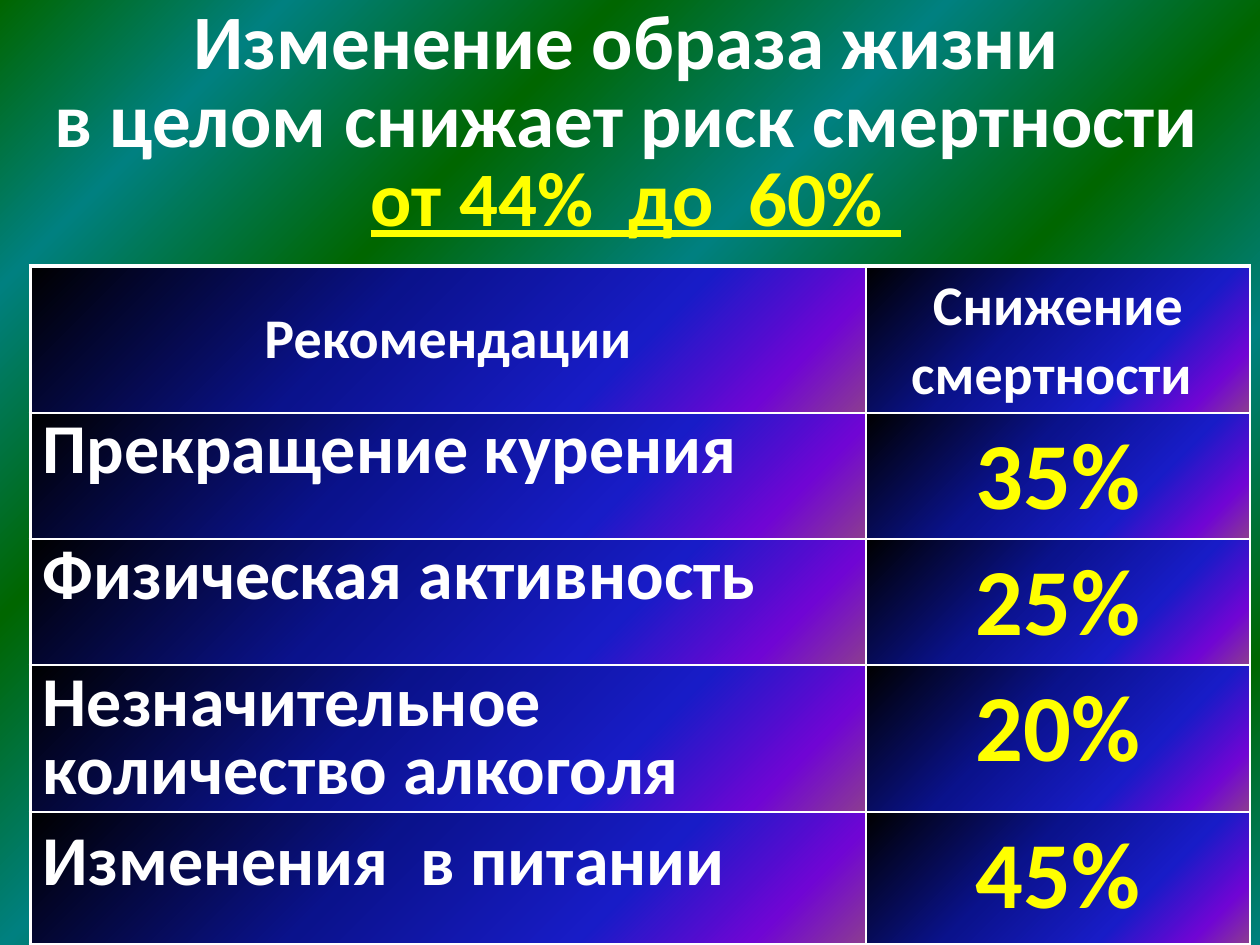
"""Slide on how lifestyle changes lower the risk of death."""
from lxml.etree import SubElement
from pptx import Presentation
from pptx.dml.color import RGBColor
from pptx.enum.text import MSO_ANCHOR as Anchor, MSO_AUTO_SIZE as AutoSize, PP_ALIGN as Align
from pptx.oxml import parse_xml
from pptx.oxml.ns import nsdecls, qn
from pptx.util import Pt

COLORS = {"white": "FFFFFF", "yellow": "FFFF00", "green": "006600", "teal": "008080",
          "black": "000000", "navy": "0A128C", "blue": "181CC7", "violet": "7005D4",
          "plum": "8C3D91"}
STRIPES = [(pos, "teal" if index % 2 else "green")
           for index, pos in enumerate((0, 13, 28, 43, 58, 72, 87, 100))]
NIGHT = [(0, "black"), (40, "navy"), (70, "blue"), (88, "violet"), (100, "plum")]
THIN, THICK = 1, 2.25
ROWS = [("Прекращение курения", "35%", 0.8),
        ("Физическая активность", "25%", 0.8),
        ("Незначительное количество алкоголя", "20%", 0.8),
        ("Изменения  в питании", "45%", None)]


def add_text(para, text, size=44, color="white", align=None, spacing=None,
             underline=None, italic=None):
    if align is not None:
        para.alignment = align
    if spacing is not None:
        para.line_spacing = spacing
    span = para.add_run()
    span.text = text
    font = span.font
    font.name, font.size, font.bold = "Calibri", Pt(size), True
    font.underline, font.italic = underline, italic
    font.color.rgb = RGBColor.from_string(COLORS[color])


def set_gradient(fill, parent, stops):
    fill.solid()
    solid = parent.find(qn("a:solidFill"))
    marks = "".join(f'<a:gs pos="{pos * 1000}"><a:srgbClr val="{COLORS[name]}"/></a:gs>'
                    for pos, name in stops)
    parent.replace(solid, parse_xml(
        f'<a:gradFill {nsdecls("a")} rotWithShape="1"><a:gsLst>{marks}</a:gsLst>'
        '<a:lin ang="2700000" scaled="1"/></a:gradFill>'))


def set_borders(cell, widths):
    props = cell._tc.get_or_add_tcPr()
    for side, width in zip("LRTB", widths):
        line = SubElement(props, qn(f"a:ln{side}"), w=str(Pt(width)))
        solid = SubElement(line, qn("a:solidFill"))
        SubElement(solid, qn("a:srgbClr"), val=COLORS["white"])


class SlideBuilder:
    """Hold the page and add each kind of element to it."""

    def __init__(self, page):
        self.page = page

    def background(self, stops):
        fill = self.page.background.fill
        fill.solid()
        set_gradient(fill, self.page._element.cSld.find(qn("p:bg")).find(qn("p:bgPr")), stops)

    def title(self, left, top, width, height, lines):
        box = self.page.shapes.add_textbox(Pt(left), Pt(top), Pt(width), Pt(height))
        frame = box.text_frame
        frame.word_wrap = True
        frame.auto_size = AutoSize.SHAPE_TO_FIT_TEXT
        for index, spans in enumerate(lines):
            para = frame.add_paragraph() if index else frame.paragraphs[0]
            for text, style in spans:
                add_text(para, text, align=Align.CENTER, spacing=0.85, **style)

    def table(self, left, top, widths, heights, rows):
        table = self.page.shapes.add_table(
            len(heights), len(widths), Pt(left), Pt(top), Pt(sum(widths)), Pt(sum(heights))).table
        for column, width in zip(table.columns, widths):
            column.width = Pt(width)
        for row, height in zip(table.rows, heights):
            row.height = Pt(height)
        last = len(rows) - 1
        for r, row in enumerate(rows):
            for c, (text, style) in enumerate(row):
                cell = table.cell(r, c)
                set_borders(cell, (THIN if c else THICK, THIN,
                                   THIN if r else THICK, THICK if r == last else THIN))
                set_gradient(cell.fill, cell._tc.tcPr, NIGHT)
                add_text(cell.text_frame.paragraphs[0], text, **style)
        table.cell(0, 0).vertical_anchor = Anchor.MIDDLE


def main():
    deck = Presentation()
    deck.slide_width, deck.slide_height = Pt(720), Pt(540)
    builder = SlideBuilder(deck.slides.add_slide(deck.slide_layouts[6]))
    builder.background(STRIPES)
    accent = {"color": "yellow", "underline": True}
    builder.title(14.4, 0, 697.7, 143.3, [
        [("Изменение образа жизни ", {})],
        [("в целом снижает риск смертности ", {})],
        [("от 44%  до  60%", accent), (" ", {**accent, "italic": True})]])
    heading = {"size": 32, "align": Align.CENTER}
    rows = [[("Рекомендации", heading), ("Снижение смертности ", heading)]]
    rows += [[(advice, {"size": 40, "spacing": spacing}),
              (drop, {"size": 54, "color": "yellow", "align": Align.CENTER})]
             for advice, drop, spacing in ROWS]
    builder.table(17.3, 152, (477.5, 219.5), (84, 72, 72, 84, 75.5), rows)
    deck.save("out.pptx")


if __name__ == "__main__":
    main()
